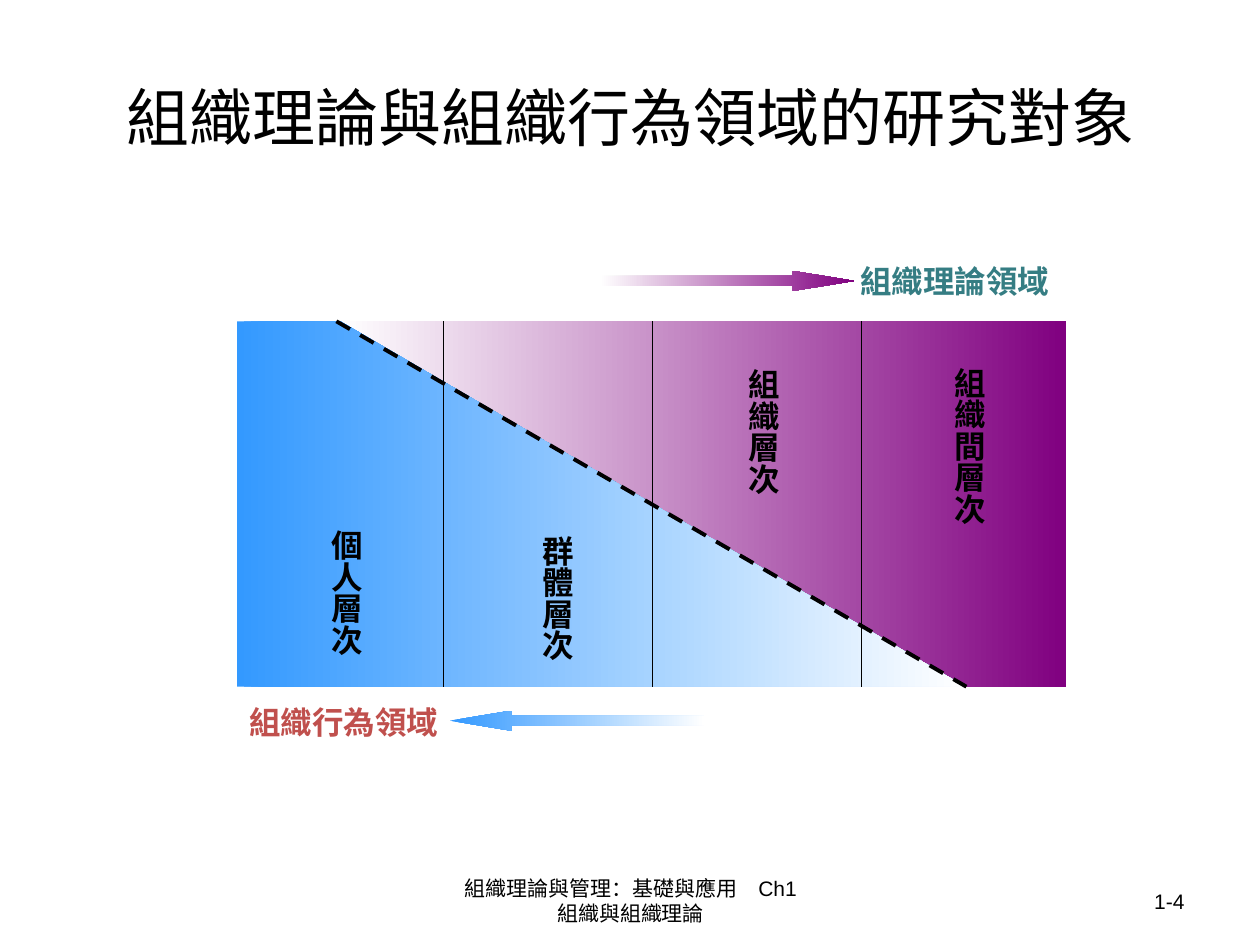
"""Build the slide on the fields of organization theory and organizational behavior."""
import pptx
import pptx.dml.color
import pptx.enum.dml
import pptx.enum.shapes
import pptx.enum.text
import pptx.oxml
import pptx.util
from dataclasses import dataclass

PX = 9144


@dataclass(frozen=True)
class Theme:
    ink: str = "000000"
    white: str = "FFFFFF"
    purple: str = "800080"
    blue: str = "3399FF"
    teal: str = "357D83"
    red: str = "C0504D"
    title_size: int = 36
    label_size: int = 18
    footer_size: int = 12
    title_font: str = "Calibri"
    body_font: str = "Arial"


theme = Theme()
rgb = pptx.dml.color.RGBColor.from_string
Align = pptx.enum.text.PP_ALIGN
Anchor = pptx.enum.text.MSO_ANCHOR
Preset = pptx.enum.shapes.MSO_SHAPE

presentation = pptx.Presentation()
presentation.slide_width, presentation.slide_height = 1000 * PX, 750 * PX
slide = presentation.slides.add_slide(presentation.slide_layouts[5])
shapes = slide.shapes


def write_text(text, box, shape=None, size=theme.label_size, color=theme.ink,
               font=theme.body_font, bold=False, align=Align.LEFT,
               anchor=Anchor.TOP, wrap=True, vertical=False):
    shape = shape or shapes.add_textbox(0, 0, 0, 0)
    shape.left, shape.top, shape.width, shape.height = [value * PX for value in box]
    frame = shape.text_frame
    frame.text = text
    frame.word_wrap = wrap
    frame.vertical_anchor = anchor
    if not wrap:
        frame.auto_size = pptx.enum.text.MSO_AUTO_SIZE.SHAPE_TO_FIT_TEXT
    if vertical:
        frame._txBody.bodyPr.set("vert", "eaVert")
    paragraph = frame.paragraphs[0]
    paragraph.alignment = align
    for run in paragraph.runs:
        run.font.size = pptx.util.Pt(size)
        run.font.name = font
        run.font.bold = bold
        run.font.color.rgb = rgb(color)


def paint_gradient(shape, left_color, right_color):
    shape.shadow.inherit = False
    shape.line.fill.background()
    shape.fill.gradient()
    shape.fill.gradient_angle = 0
    for stop, color in zip(shape.fill.gradient_stops, (left_color, right_color)):
        stop.color.rgb = rgb(color)


write_text("組織理論與組織行為領域的研究對象", (50, 30, 900, 125), shape=shapes.title,
           size=theme.title_size, font=theme.title_font, align=Align.CENTER,
           anchor=Anchor.MIDDLE)

left, top, right, bottom = 188, 255, 846, 545
fields = [
    ([(269, top), (right, top), (right, bottom), (764, bottom)],
     Preset.RIGHT_ARROW, (476, 215), (theme.white, theme.purple),
     "組織理論領域", (673, 203), theme.teal),
    ([(270, top), (left, top), (left, bottom), (766, bottom)],
     Preset.LEFT_ARROW, (357, 564), (theme.blue, theme.white),
     "組織行為領域", (188, 553), theme.red),
]
for corners, preset, arrow_at, colors, name, name_at, name_color in fields:
    builder = shapes.build_freeform(*corners[0], scale=PX)
    builder.add_line_segments(corners[1:], close=True)
    paint_gradient(builder.convert_to_shape(), *colors)
    arrow = shapes.add_shape(preset, arrow_at[0] * PX, arrow_at[1] * PX, 202 * PX, 16 * PX)
    arrow.adjustments[0], arrow.adjustments[1] = 0.5, 3.06
    paint_gradient(arrow, *colors)
    write_text(name, (*name_at, 170, 40), color=name_color, bold=True, wrap=False)

levels = [("個人層次", 245, 411, 108), ("群體層次", 412, 415, 108),
          ("組織層次", 576, 283, 108), ("組織間層次", 739, 282, 132)]
for name, level_left, level_top, height in levels:
    write_text(name, (level_left, level_top, 50, height), bold=True, wrap=False,
               vertical=True)

dividers = [(352 + 166 * index, 352 + 166 * index, 0.75, None) for index in range(3)]
for start, end, width, dash in [(267, 767, 2.25, pptx.enum.dml.MSO_LINE.DASH), *dividers]:
    line = shapes.add_connector(pptx.enum.shapes.MSO_CONNECTOR.STRAIGHT,
                                start * PX, top * PX, end * PX, bottom * PX)
    line.line.color.rgb = rgb(theme.ink)
    line.line.width = pptx.util.Pt(width)
    line.line.dash_style = dash
    line._element.spPr.append(pptx.oxml.parse_xml(
        '<a:effectLst xmlns:a="http://schemas.openxmlformats.org/drawingml/2006/main"/>'))

write_text("組織理論與管理：基礎與應用　Ch1\v組織與組織理論", (342, 695, 317, 40),
           size=theme.footer_size, align=Align.CENTER, anchor=Anchor.MIDDLE)
write_text("1-4", (717, 695, 233, 40), size=theme.footer_size, align=Align.RIGHT,
           anchor=Anchor.MIDDLE)

presentation.save("out.pptx")
